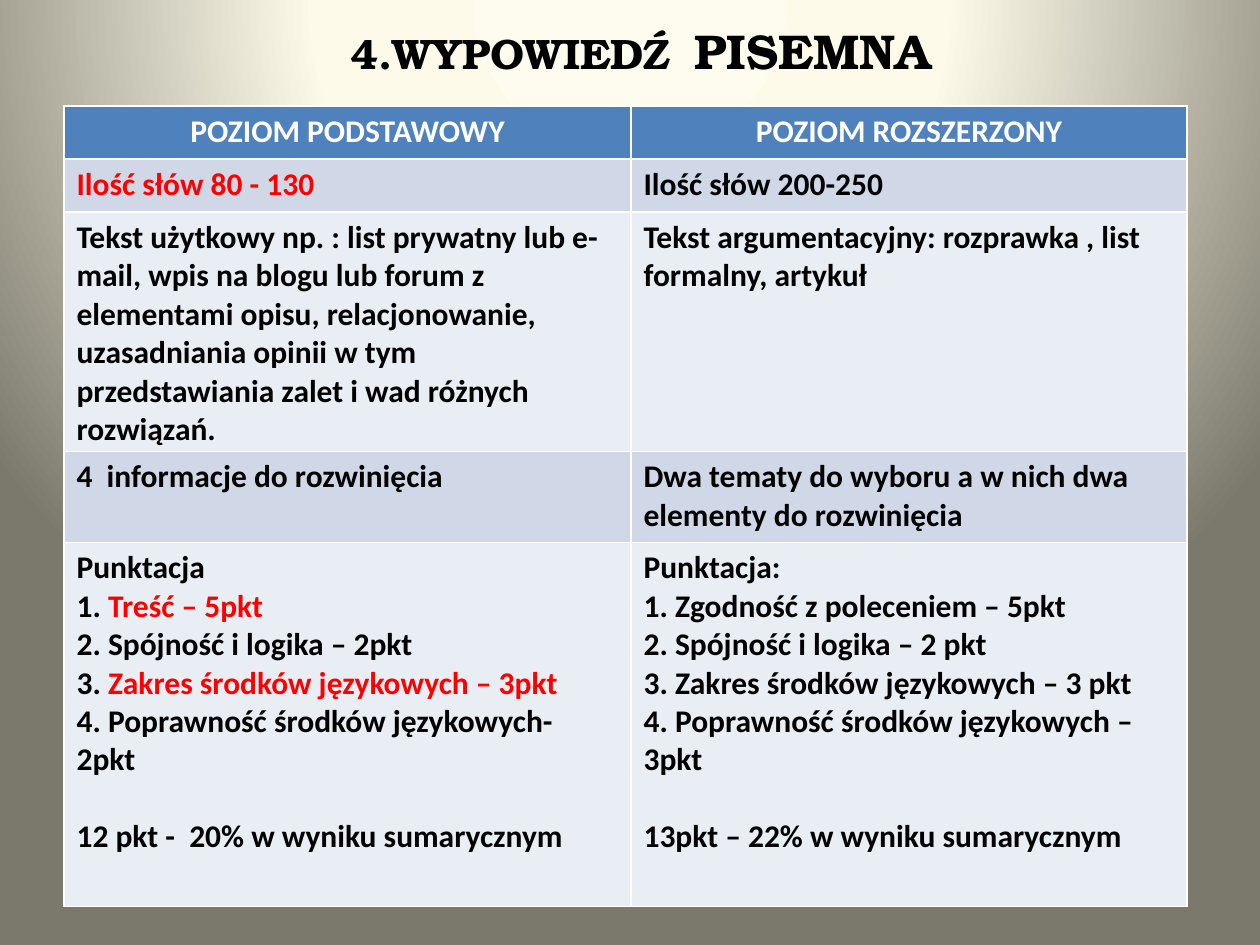
from dataclasses import dataclass

from lxml import etree
from pptx import Presentation
from pptx.dml.color import RGBColor as RGB
from pptx.enum.text import MSO_ANCHOR as Anchor, PP_ALIGN as Align
from pptx.oxml import parse_xml
from pptx.oxml.ns import nsdecls, qn
from pptx.util import Emu, Pt

SCALE = 914400 / 126  # EMU in one px


def px(n):
    return Emu(round(n * SCALE))


@dataclass(frozen=True)
class Theme:
    title_font: str = "TeX Gyre Bonum"
    body_font: str = "Calibri"
    small: float = 24.3
    gap: float = 39.6
    large: float = 27.9
    body: int = 18
    space: int = 22
    ink: str = "000000"
    mark: str = "FF0000"
    light: str = "FFFFFF"
    head: str = "4F81BD"
    bands: tuple = ("D0D8E8", "E9EDF4")
    glow: tuple = ((0, "FEFCEE"), (40, "FDFAEA"), (100, "7B796B"))


class Deck:
    def __init__(self, theme, width, height):
        self.theme = theme
        self.prs = Presentation()
        self.prs.slide_width, self.prs.slide_height = px(width), px(height)
        self.slide = self.prs.slides.add_slide(self.prs.slide_layouts[6])

    def backdrop(self):
        """Radial gradient centred above the slide."""
        fill = self.slide.background.fill
        fill.gradient()
        props = self.slide.element.find(".//" + qn("p:bgPr"))
        grad = props.find(qn("a:gradFill"))
        stops = "".join(
            f'<a:gs pos="{at * 1000}"><a:srgbClr val="{tone}"/></a:gs>'
            for at, tone in self.theme.glow)
        props.replace(grad, parse_xml(
            f'<a:gradFill {nsdecls("a")} rotWithShape="1"><a:gsLst>{stops}</a:gsLst>'
            '<a:path path="circle"><a:fillToRect l="50000" t="-80000" '
            'r="50000" b="180000"/></a:path></a:gradFill>'))
        if props.find(qn("a:effectLst")) is None:
            etree.SubElement(props, qn("a:effectLst"))

    def style(self, para, font, tone=None):
        para.font.name, para.font.bold = font, True
        if tone:
            para.font.color.rgb = RGB.from_string(tone)

    def title(self, parts, x, y, w, h):
        frame = self.slide.shapes.add_textbox(px(x), px(y), px(w), px(h)).text_frame
        frame.word_wrap = True
        frame.vertical_anchor = Anchor.TOP
        frame.margin_top = 0
        para = frame.paragraphs[0]
        para.alignment = Align.CENTER
        self.style(para, self.theme.title_font, self.theme.ink)
        for text, size in parts:
            run = para.add_run()
            run.text, run.font.size = text, Pt(size)

    def line(self, para, text, tone):
        """One paragraph; whatever follows a bar is in the mark colour."""
        plain, _, red = text.partition("|")
        mixed = plain and red
        self.style(para, self.theme.body_font,
                   None if mixed else self.theme.mark if red else tone)
        para.font.size = Pt(self.theme.body)
        for part, hue in ((plain, tone), (red, self.theme.mark)):
            if part:
                run = para.add_run()
                run.text = part
                if mixed:
                    run.font.color.rgb = RGB.from_string(hue)

    def cell(self, cell, lines, fill, tone, align):
        cell.fill.solid()
        cell.fill.fore_color.rgb = RGB.from_string(fill)
        frame = cell.text_frame
        for i, text in enumerate(lines):
            para = frame.add_paragraph() if i else frame.paragraphs[0]
            para.alignment = align
            self.line(para, text, tone)
        if len(lines) > 1:  # the total stands apart
            para.space_before = Pt(self.theme.space)

    def table(self, rows, x, y, widths, heights):
        grid = self.slide.shapes.add_table(
            len(rows), len(widths), px(x), px(y),
            px(sum(widths)), px(sum(heights))).table
        for col, w in zip(grid.columns, widths):
            col.width = px(w)
        for r, (row, h) in enumerate(zip(rows, heights)):
            grid.rows[r].height = px(h)
            if r:
                look = self.theme.bands[(r - 1) % 2], self.theme.ink, Align.LEFT
            else:
                look = self.theme.head, self.theme.light, Align.CENTER
            for c, lines in enumerate(row):
                self.cell(grid.cell(r, c), lines, *look)


ROWS = [
    (["POZIOM PODSTAWOWY"], ["POZIOM ROZSZERZONY"]),
    (["|Ilość słów 80 - 130"], ["Ilość słów 200-250"]),
    (["Tekst użytkowy np. : list prywatny lub e-mail, wpis na blogu lub forum z "
      "elementami opisu, relacjonowanie, uzasadniania opinii w tym "
      "przedstawiania zalet i wad różnych rozwiązań."],
     ["Tekst argumentacyjny: rozprawka , list formalny, artykuł"]),
    (["4  informacje do rozwinięcia"],
     ["Dwa tematy do wyboru a w nich dwa elementy do rozwinięcia"]),
    (["Punktacja",
      "1. |Treść – 5pkt",
      "2. Spójność i logika – 2pkt",
      "3. |Zakres środków językowych – 3pkt",
      "4. Poprawność środków językowych- 2pkt",
      "12 pkt -  20% w wyniku sumarycznym"],
     ["Punktacja:",
      "1. Zgodność z poleceniem – 5pkt",
      "2. Spójność i logika – 2 pkt",
      "3. Zakres środków językowych – 3 pkt",
      "4. Poprawność środków językowych – 3pkt",
      "13pkt – 22% w wyniku sumarycznym"]),
]


def main():
    theme = Theme()
    deck = Deck(theme, 1260, 945)
    deck.backdrop()

    # Heading
    deck.title([("4.WYPOWIEDŹ", theme.small), (" ", theme.gap),
                ("PISEMNA", theme.large)], 84, 0, 1113, 140)

    # Comparison of the two levels
    deck.table(ROWS, 64, 106, [567, 556], [53, 53, 233, 91, 364])

    deck.prs.save("out.pptx")


if __name__ == "__main__":
    main()
